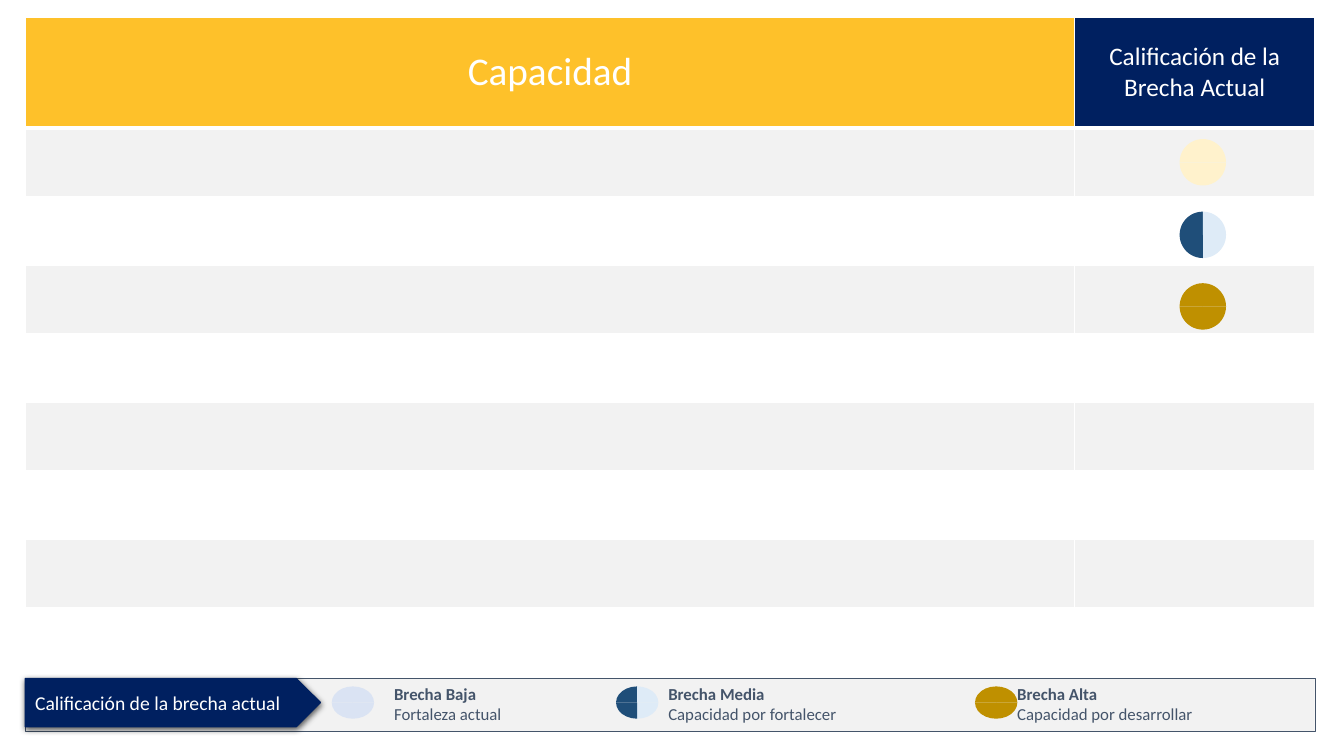
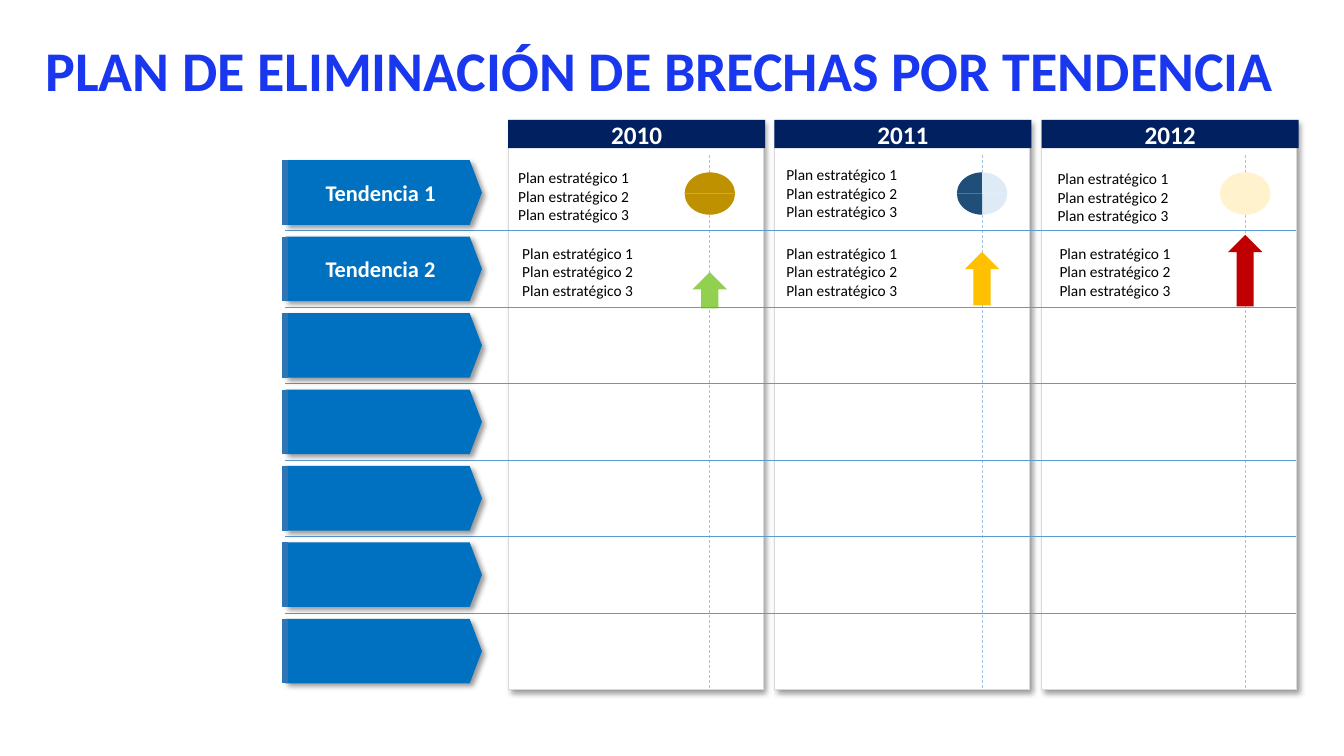
import pptx
import pptx.util
import pptx.dml.color
import pptx.enum.dml
import pptx.enum.shapes
import pptx.enum.text
import pptx.oxml
import pptx.oxml.ns
from dataclasses import dataclass

Inches = pptx.util.Inches
Pt = pptx.util.Pt
SHAPE = pptx.enum.shapes.MSO_SHAPE
ALIGN = pptx.enum.text.PP_ALIGN
ANCHOR = pptx.enum.text.MSO_ANCHOR
DASH = pptx.enum.dml.MSO_LINE


@dataclass(frozen=True)
class Theme:
    font: str = "Calibri"
    white: str = "FFFFFF"
    black: str = "000000"
    navy: str = "002060"
    amber: str = "FEC12A"
    band: str = "F2F2F2"
    slate: str = "44546A"
    title: str = "1937EE"
    trend: str = "0070C0"
    trend_edge: str = "2E75B6"
    row_line: str = "5B9BD5"
    guide: str = "9DC3E6"
    frame: str = "D9D9D9"
    gold: str = "BF9000"
    cream: str = "FFF2CC"
    ice: str = "DAE3F3"
    deep: str = "1F4E79"
    pale: str = "DEEBF7"
    green: str = "92D050"
    yellow: str = "FFC000"
    red: str = "C00000"
    title_size: int = 40
    capacity_size: int = 28
    heading_size: int = 18
    trend_size: int = 16
    key_size: int = 14
    legend_size: int = 12
    plan_size: int = 11


T = Theme()
LOW, MEDIUM, HIGH = (T.cream, T.cream), (T.deep, T.pale), (T.gold, T.gold)

TABLE_HEADINGS = [
    ("Capacidad", 10.41, T.amber, T.capacity_size),
    ("Calificación de la Brecha Actual", 2.38, T.navy, T.heading_size),
]
BODY_ROWS = 8
RATINGS = [(1.61, LOW), (2.33, MEDIUM), (3.04, HIGH)]
LEGEND_TITLE = "Calificación de la brecha actual"
LEGEND = [
    ("Brecha Baja", "Fortaleza actual", 3.5, (T.ice, T.ice), 3.81, 1.98),
    ("Brecha Media", "Capacidad por fortalecer", 6.32, MEDIUM, 6.53, 2.96),
    ("Brecha Alta", "Capacidad por desarrollar", 9.88, HIGH, 9.99, 3.05),
]

PLAN_TITLE = "PLAN DE ELIMINACIÓN DE BRECHAS POR TENDENCIA"
PLANS = ["Plan estratégico 1", "Plan estratégico 2", "Plan estratégico 3"]
TRENDS = ["Tendencia 1", "Tendencia 2", "", "", "", "", ""]
YEARS = [
    dict(year="2010", left=5.04, guide=7.04, rating=HIGH,
         plans=[(5.04, 1.62), (5.08, 2.37)], arrow=(2.7, 0.36, T.green)),
    dict(year="2011", left=7.68, guide=9.74, rating=MEDIUM,
         plans=[(7.7, 1.59), (7.7, 2.37)], arrow=(2.5, 0.53, T.yellow)),
    dict(year="2012", left=10.33, guide=12.35, rating=LOW,
         plans=[(10.39, 1.63), (10.41, 2.37)], arrow=(2.33, 0.71, T.red)),
]
TREND_LEFT, TREND_TOP, TREND_LAST = 2.83, 1.59, 6.14
TREND_WIDTH, TREND_HEIGHT = 1.95, 0.64
TREND_PITCH = (TREND_LAST - TREND_TOP) / (len(TRENDS) - 1)
GRID_RIGHT, GRID_TOP, GRID_BOTTOM = 12.85, 1.19, 6.84

SOFT_SHADOW = (40, 4, 3, 45)
KEY_SHADOW = (63, 4.5, 1.5, 90)


def rgb(color):
    return pptx.dml.color.RGBColor.from_string(color)


def write(tf, text, size, color, bold=False, align=ALIGN.LEFT,
          anchor=ANCHOR.TOP, inset=None, spacing=None):
    tf.word_wrap = True
    tf.auto_size = pptx.enum.text.MSO_AUTO_SIZE.NONE
    tf.vertical_anchor = anchor
    if inset is not None:
        tf.margin_left = tf.margin_right = Inches(inset)
        tf.margin_top = tf.margin_bottom = Inches(inset)
    lines = [text] if isinstance(text, str) else text
    for i, line in enumerate(lines):
        p = tf.paragraphs[0] if i == 0 else tf.add_paragraph()
        p.alignment = align
        if spacing:
            p.line_spacing = Pt(spacing)
        line_text, line_bold = line if isinstance(line, tuple) else (line, bold)
        r = p.add_run()
        r.text = line_text
        r.font.name = T.font
        r.font.size = Pt(size)
        r.font.bold = line_bold
        r.font.color.rgb = rgb(color)


def add_text(s, box, text, **style):
    tb = s.shapes.add_textbox(*map(Inches, box))
    write(tb.text_frame, text, **style)


def add_shape(s, kind, box, fill, line=None, width=0.25, dash=None, shadow=None):
    sp = s.shapes.add_shape(kind, *map(Inches, box))
    sp.fill.solid()
    sp.fill.fore_color.rgb = rgb(fill)
    if line:
        sp.line.color.rgb = rgb(line)
        sp.line.width = Pt(width)
        if dash:
            sp.line.dash_style = dash
    else:
        sp.line.fill.background()
    sp.shadow.inherit = False
    if shadow:
        alpha, blur, distance, angle = shadow
        effects = sp.element.spPr.find(pptx.oxml.ns.qn("a:effectLst"))
        effects.append(pptx.oxml.parse_xml(
            f'<a:outerShdw {pptx.oxml.ns.nsdecls("a")} blurRad="{Pt(blur)}" '
            f'dist="{Pt(distance)}" dir="{angle * 60000}" algn="ctr" rotWithShape="0">'
            f'<a:srgbClr val="{T.black}"><a:alpha val="{alpha * 1000}"/></a:srgbClr>'
            '</a:outerShdw>'))
    return sp


def add_line(s, x1, y1, x2, y2, color, width, dash=None):
    ln = s.shapes.add_connector(pptx.enum.shapes.MSO_CONNECTOR.STRAIGHT,
                                *map(Inches, (x1, y1, x2, y2)))
    ln.line.color.rgb = rgb(color)
    ln.line.width = Pt(width)
    if dash:
        ln.line.dash_style = dash
    ln.element.spPr.append(pptx.oxml.parse_xml(
        f'<a:effectLst {pptx.oxml.ns.nsdecls("a")}/>'))


def add_gauge(s, cx, cy, rx, ry, colors):
    left, right = colors
    quadrants = [(-1, -1, left), (1, -1, right), (1, 1, right), (-1, 1, left)]
    for i, (dx, dy, fill) in enumerate(quadrants):
        w, h = (ry, rx) if i % 2 else (rx, ry)
        x, y = cx + dx * rx / 2, cy + dy * ry / 2
        wedge = add_shape(s, SHAPE.PIE_WEDGE, (x - w / 2, y - h / 2, w, h), fill)
        wedge.rotation = 90 * i


def format_cell(cell, fill, bottom=1):
    cell.fill.solid()
    cell.fill.fore_color.rgb = rgb(fill)
    tc_pr = cell._tc.get_or_add_tcPr()
    for i, (side, width) in enumerate([("L", 1), ("R", 1), ("T", 1), ("B", bottom)]):
        tc_pr.insert(i, pptx.oxml.parse_xml(
            f'<a:ln{side} {pptx.oxml.ns.nsdecls("a")} w="{Pt(width)}">'
            f'<a:solidFill><a:srgbClr val="{T.white}"/></a:solidFill></a:ln{side}>'))


def build_ratings(prs):
    s = prs.slides.add_slide(prs.slide_layouts[6])
    table = s.shapes.add_table(BODY_ROWS + 1, len(TABLE_HEADINGS), Inches(0.25),
                               Inches(0.17), Inches(12.79), Inches(6.54)).table
    table.first_row = table.horz_banding = False
    for i, row in enumerate(table.rows):
        row.height = Inches(0.68 if i else 1.1)
    for c, (text, width, fill, size) in enumerate(TABLE_HEADINGS):
        table.columns[c].width = Inches(width)
        head = table.cell(0, c)
        format_cell(head, fill, bottom=3)
        head.vertical_anchor = ANCHOR.MIDDLE
        p = head.text_frame.paragraphs[0]
        p.alignment = ALIGN.CENTER
        r = p.add_run()
        r.text = text
        r.font.name, r.font.size = T.font, Pt(size)
        r.font.color.rgb = rgb(T.white)
        for i in range(1, BODY_ROWS + 1):
            format_cell(table.cell(i, c), T.band if i % 2 else T.white)

    add_shape(s, SHAPE.RECTANGLE, (0.25, 6.73, 12.79, 0.52), T.band, line=T.slate)
    key = add_shape(s, SHAPE.PENTAGON, (0.25, 6.73, 2.93, 0.48), T.navy,
                    line=T.navy, width=0.75, shadow=KEY_SHADOW)
    write(key.text_frame, LEGEND_TITLE, size=T.key_size, color=T.white,
          anchor=ANCHOR.MIDDLE)
    for name, meaning, cx, colors, left, width in LEGEND:
        add_gauge(s, cx, 6.97, 0.21, 0.16, colors)
        add_text(s, (left, 6.73, width, 0.52), [(name, True), (meaning, False)],
                 size=T.legend_size, color=T.slate)
    for cy, colors in RATINGS:
        add_gauge(s, 11.93, cy, 0.23, 0.23, colors)


def build_plan(prs):
    s = prs.slides.add_slide(prs.slide_layouts[5])
    title = s.shapes.title
    title.left, title.top, title.width, title.height = map(
        Inches, (0.35, 0.41, 12.79, 0.7))
    write(title.text_frame, PLAN_TITLE, size=T.title_size, color=T.title,
          bold=True, spacing=T.title_size)

    for column in YEARS:
        left, guide = column["left"], column["guide"]
        add_shape(s, SHAPE.RECTANGLE, (left, GRID_TOP, 2.53, GRID_BOTTOM - GRID_TOP),
                  T.white, line=T.frame, dash=DASH.ROUND_DOT, shadow=SOFT_SHADOW)
        head = add_shape(s, SHAPE.RECTANGLE, (left, GRID_TOP, 2.55, 0.28), T.navy)
        write(head.text_frame, column["year"], size=T.heading_size, color=T.white,
              bold=True, align=ALIGN.CENTER, anchor=ANCHOR.MIDDLE, inset=0)
        add_line(s, guide, 1.54, guide, 6.83, T.guide, 0.5, DASH.DASH)
        for x, y in column["plans"]:
            add_text(s, (x, y, 1.49, 0.66), PLANS, size=T.plan_size, color=T.black)
        top, height, fill = column["arrow"]
        add_shape(s, SHAPE.UP_ARROW, (guide - 0.17, top, 0.34, height), fill)
        add_gauge(s, guide, 1.92, 0.25, 0.21, column["rating"])

    for i, trend in enumerate(TRENDS):
        top = TREND_TOP + i * TREND_PITCH
        if i < len(TRENDS) - 1:
            add_line(s, TREND_LEFT, top + 0.7, GRID_RIGHT, top + 0.7, T.row_line, 0.5)
        tag = add_shape(s, SHAPE.PENTAGON, (TREND_LEFT, top, TREND_WIDTH, TREND_HEIGHT),
                        T.trend, shadow=SOFT_SHADOW)
        tag.adjustments[0] = 0.19
        if trend:
            write(tag.text_frame, trend, size=T.trend_size, color=T.white, bold=True,
                  align=ALIGN.CENTER, anchor=ANCHOR.MIDDLE, inset=0)
        add_line(s, TREND_LEFT, top, TREND_LEFT, top + TREND_HEIGHT, T.trend_edge, 4.5)


def main():
    prs = pptx.Presentation()
    prs.slide_width, prs.slide_height = Inches(13.33), Inches(7.5)
    build_ratings(prs)
    build_plan(prs)
    prs.save("out.pptx")


if __name__ == "__main__":
    main()
